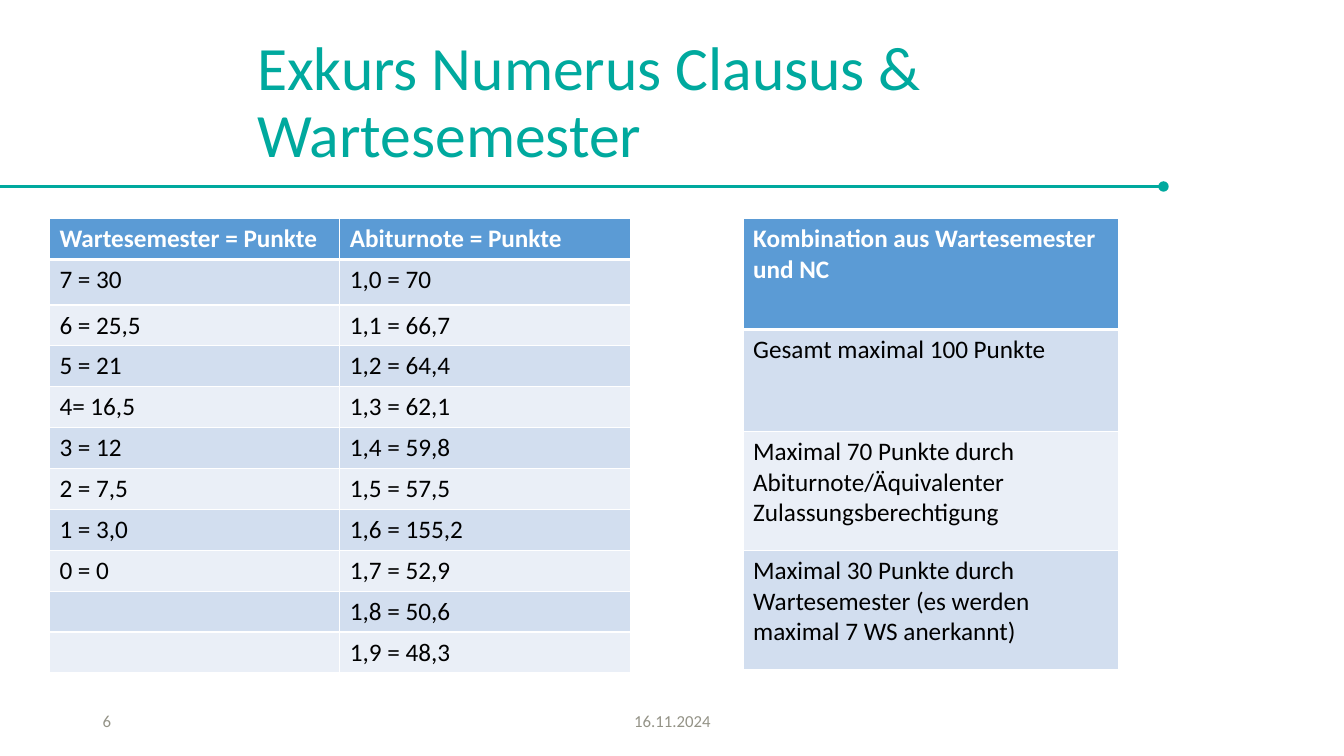
from itertools import zip_longest

from lxml.etree import SubElement
from pptx import Presentation
from pptx.dml.color import RGBColor
from pptx.enum.shapes import MSO_CONNECTOR
from pptx.enum.text import MSO_ANCHOR, MSO_AUTO_SIZE, PP_ALIGN
from pptx.oxml.ns import qn
from pptx.util import Inches, Pt

COLORS = {
    "teal": "00A99E",
    "white": "FFFFFF",
    "black": "000000",
    "header": "5B9BD5",
    "band_dark": "D2DEEF",
    "band_light": "EAEFF7",
    "footer": "949387",
}
FONT = "Calibri"

WAITING_POINTS = [
    "Wartesemester = Punkte", "7 = 30", "6 = 25,5", "5 = 21", "4= 16,5",
    "3 = 12", "2 = 7,5", "1 = 3,0", "0 = 0",
]
GRADE_POINTS = [
    "Abiturnote = Punkte", "1,0 = 70", "1,1 = 66,7", "1,2 = 64,4", "1,3 = 62,1",
    "1,4 = 59,8", "1,5 = 57,5", "1,6 = 155,2", "1,7 = 52,9", "1,8 = 50,6",
    "1,9 = 48,3",
]
COMBINATION = [
    "Kombination aus Wartesemester und NC",
    "Gesamt maximal 100 Punkte",
    "Maximal 70 Punkte durch Abiturnote/Äquivalenter Zulassungsberechtigung",
    "Maximal 30 Punkte durch Wartesemester (es werden maximal 7 WS anerkannt)",
]


def color(name):
    return RGBColor.from_string(COLORS[name])


def write(frame, text, size, color_name, align=PP_ALIGN.LEFT, bold=False):
    para = frame.paragraphs[0]
    para.text = text
    para.alignment = align
    font = para.font
    font.name, font.size, font.bold = FONT, Pt(size), bold
    font.color.rgb = color(color_name)
    return para


def add_title(page, text, left, top, width, height):
    title = page.shapes.title
    title.left, title.top = Inches(left), Inches(top)
    title.width, title.height = Inches(width), Inches(height)
    frame = title.text_frame
    frame.word_wrap = True
    frame.auto_size = MSO_AUTO_SIZE.NONE
    frame.vertical_anchor = MSO_ANCHOR.MIDDLE
    write(frame, text, 44, "teal").line_spacing = 0.9


def add_rule(page, top, right):
    rule = page.shapes.add_connector(
        MSO_CONNECTOR.STRAIGHT, 0, Inches(top), Inches(right), Inches(top))
    rule.line.color.rgb = color("teal")
    rule.line.width = Pt(2.5)
    SubElement(rule.line._get_or_add_ln(), qn("a:tailEnd"), type="oval")
    SubElement(rule._element.spPr, qn("a:effectLst"))


def add_footer(page, text, left, width, align):
    box = page.shapes.add_textbox(
        Inches(left), Inches(6.95), Inches(width), Inches(0.4))
    box.text_frame.word_wrap = True
    box.text_frame.vertical_anchor = MSO_ANCHOR.MIDDLE
    write(box.text_frame, text, 12, "footer", align)


def add_borders(cell, bottom_width):
    properties = cell._tc.get_or_add_tcPr()
    for side, width in (("L", 1), ("R", 1), ("T", 1), ("B", bottom_width)):
        border = SubElement(properties, qn(f"a:ln{side}"), w=str(Pt(width)))
        fill = SubElement(border, qn("a:solidFill"))
        SubElement(fill, qn("a:srgbClr"), val=COLORS["white"])


def add_points_table(page, columns, left, top, column_width, row_heights):
    rows = list(zip_longest(*columns, fillvalue=""))
    table = page.shapes.add_table(
        len(rows), len(columns), Inches(left), Inches(top),
        Inches(column_width * len(columns)), Inches(sum(row_heights))).table
    for column in table.columns:
        column.width = Inches(column_width)
    for index, (texts, height) in enumerate(zip(rows, row_heights)):
        is_header = index == 0
        band = "header" if is_header else ("band_light", "band_dark")[index % 2]
        table.rows[index].height = Inches(height)
        for cell, text in zip(table.rows[index].cells, texts):
            add_borders(cell, 3 if is_header else 1)
            cell.fill.solid()
            cell.fill.fore_color.rgb = color(band)
            write(cell.text_frame, text, 18,
                  "white" if is_header else "black", bold=is_header)


def build_admission_slide(deck):
    page = deck.slides.add_slide(deck.slide_layouts[5])
    page.background.fill.solid()
    page.background.fill.fore_color.rgb = color("white")
    add_rule(page, 1.85, 11.54)
    add_title(page, "Exkurs Numerus Clausus & Wartesemester", 2.45, 0.31, 10.09, 1.45)
    add_points_table(page, [WAITING_POINTS, GRADE_POINTS], 0.49, 2.17, 2.88,
                     [0.39, 0.45] + [0.39] * 9)
    add_footer(page, "16.11.2024", 5.17, 3, PP_ALIGN.CENTER)
    add_footer(page, "6", 0.92, 0.91, PP_ALIGN.LEFT)
    add_points_table(page, [COMBINATION], 7.37, 2.17, 3.72, [1.1, 1.01, 1.18, 1.18])


def main():
    deck = Presentation()
    deck.slide_width, deck.slide_height = Inches(13.33), Inches(7.5)
    build_admission_slide(deck)
    deck.save("out.pptx")


if __name__ == "__main__":
    main()
